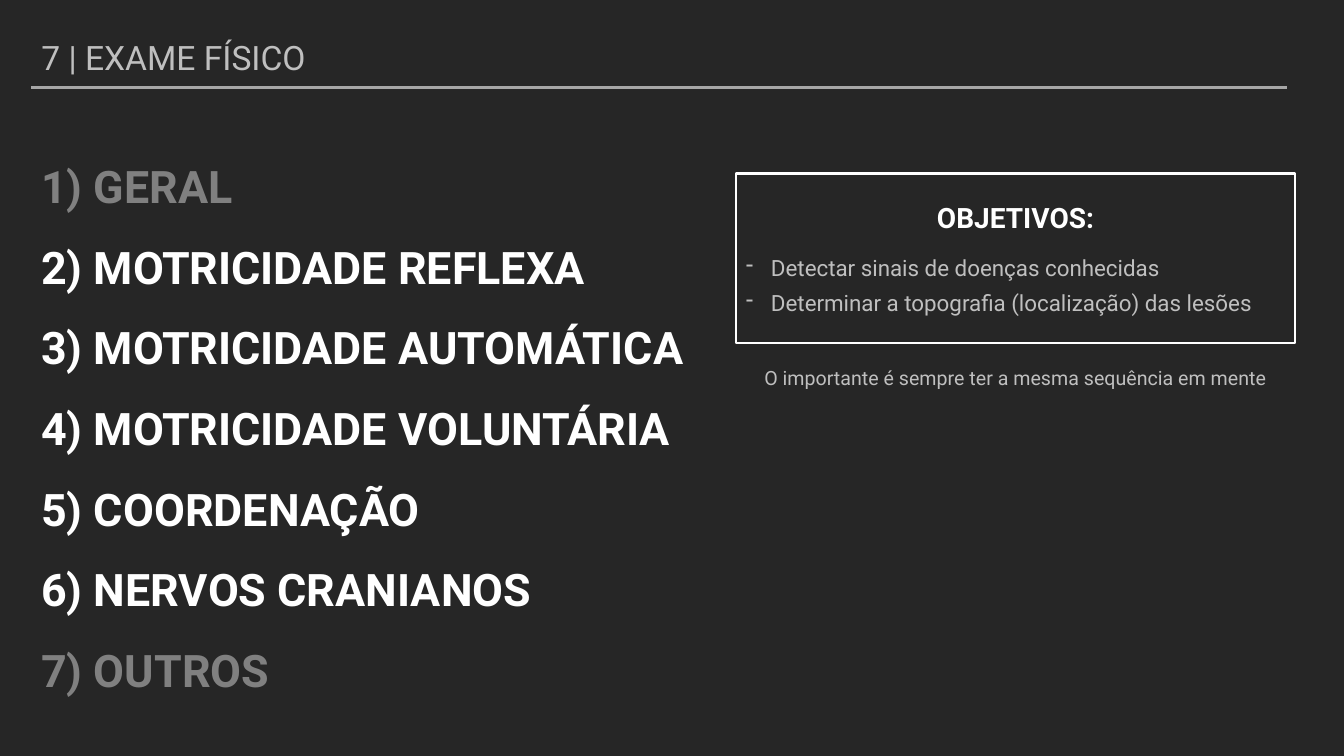
from lxml import etree
from pptx import Presentation
from pptx.dml.color import RGBColor
from pptx.enum.shapes import MSO_CONNECTOR, MSO_SHAPE
from pptx.enum.text import MSO_ANCHOR, MSO_AUTO_SIZE, PP_ALIGN
from pptx.oxml.ns import qn
from pptx.util import Pt

LEFT, MID, JUST = PP_ALIGN.LEFT, PP_ALIGN.CENTER, PP_ALIGN.JUSTIFY
TOP, CENTER = MSO_ANCHOR.TOP, MSO_ANCHOR.MIDDLE
FIXED = MSO_AUTO_SIZE.NONE
LINE, RECT = MSO_CONNECTOR.STRAIGHT, MSO_SHAPE.RECTANGLE

DARK = RGBColor(0x26, 0x26, 0x26)
WHITE = RGBColor(0xFF, 0xFF, 0xFF)
PALE = RGBColor(0xBF, 0xBF, 0xBF)
RULE = RGBColor(0xA6, 0xA6, 0xA6)
DIM = RGBColor(0x80, 0x80, 0x80)

TITLE = "7 | EXAME FÍSICO"
STEPS = [
    ("1) GERAL", DIM),
    ("2) MOTRICIDADE REFLEXA", WHITE),
    ("3) MOTRICIDADE AUTOMÁTICA", WHITE),
    ("4) MOTRICIDADE VOLUNTÁRIA", WHITE),
    ("5) COORDENAÇÃO", WHITE),
    ("6) NERVOS CRANIANOS", WHITE),
    ("7) OUTROS", DIM),
]
HEAD = "OBJETIVOS:"
GOALS = [
    ("Detectar sinais de doenças conhecidas", 14.3),
    ("Determinar a topografia (localização) das lesões", 6),
]
NOTE = "O importante é sempre ter a mesma sequência em mente"

EDGE, WIDE = 22.3, 897.1


def place(shape, left, top, width, height):
    shape.left, shape.top = Pt(left), Pt(top)
    shape.width, shape.height = Pt(width), Pt(height)


def frame(shape, anchor):
    box = shape.text_frame
    box.word_wrap = True
    box.auto_size = FIXED
    box.vertical_anchor = anchor
    return box


def style(para, size, color, align, bold=False, before=0):
    para.alignment = align
    para.space_before = Pt(before)
    for run in para.runs:
        font = run.font
        font.name, font.size, font.bold = "Roboto", Pt(size), bold
        font.color.rgb = color


def bullet(para, mark=None, indent=0):
    props = para._p.get_or_add_pPr()
    props.set("marL", str(Pt(indent)))
    props.set("indent", str(-Pt(indent)))
    if mark:
        etree.SubElement(props, qn("a:buChar")).set("char", mark)
    else:
        etree.SubElement(props, qn("a:buNone"))


deck = Presentation()
deck.slide_width, deck.slide_height = Pt(960), Pt(540)
slide = deck.slides.add_slide(deck.slide_layouts[1])
slide.background.fill.solid()
slide.background.fill.fore_color.rgb = DARK
shapes = slide.shapes

title = shapes.title
place(title, EDGE, 23, WIDE, 36)
box = frame(title, TOP)
box.text = TITLE
style(box.paragraphs[0], 24, PALE, LEFT)

rule = shapes.add_connector(LINE, Pt(EDGE), Pt(62.6), Pt(EDGE + WIDE), Pt(62.6))
rule.line.color.rgb = RULE
rule.line.width = Pt(2.25)
etree.SubElement(rule._element.spPr, qn("a:effectLst"))

body = slide.placeholders[1]
place(body, EDGE, 90.7, 915.8, 460.8)
box = frame(body, TOP)
box.text = "\n".join(text for text, color in STEPS)
for para, (text, color) in zip(box.paragraphs, STEPS):
    bullet(para)
    para.line_spacing = 1.5
    style(para, 32, color, JUST, bold=True)

card = shapes.add_shape(RECT, Pt(525.6), Pt(123.9), Pt(399.6), Pt(121))
card.shadow.inherit = False
card.fill.background()
card.line.color.rgb = WHITE
card.line.width = Pt(1.5)
box = frame(card, CENTER)
box.text = HEAD
style(box.paragraphs[0], 20, WHITE, MID, bold=True)
for text, gap in GOALS:
    para = box.add_paragraph()
    para.text = text
    bullet(para, "-", 18)
    style(para, 16, PALE, LEFT, before=gap)

note = shapes.add_textbox(Pt(508.3), Pt(254.2), Pt(434.2), Pt(31))
box = frame(note, CENTER)
box.text = NOTE
style(box.paragraphs[0], 14, PALE, MID)

deck.save("out.pptx")
